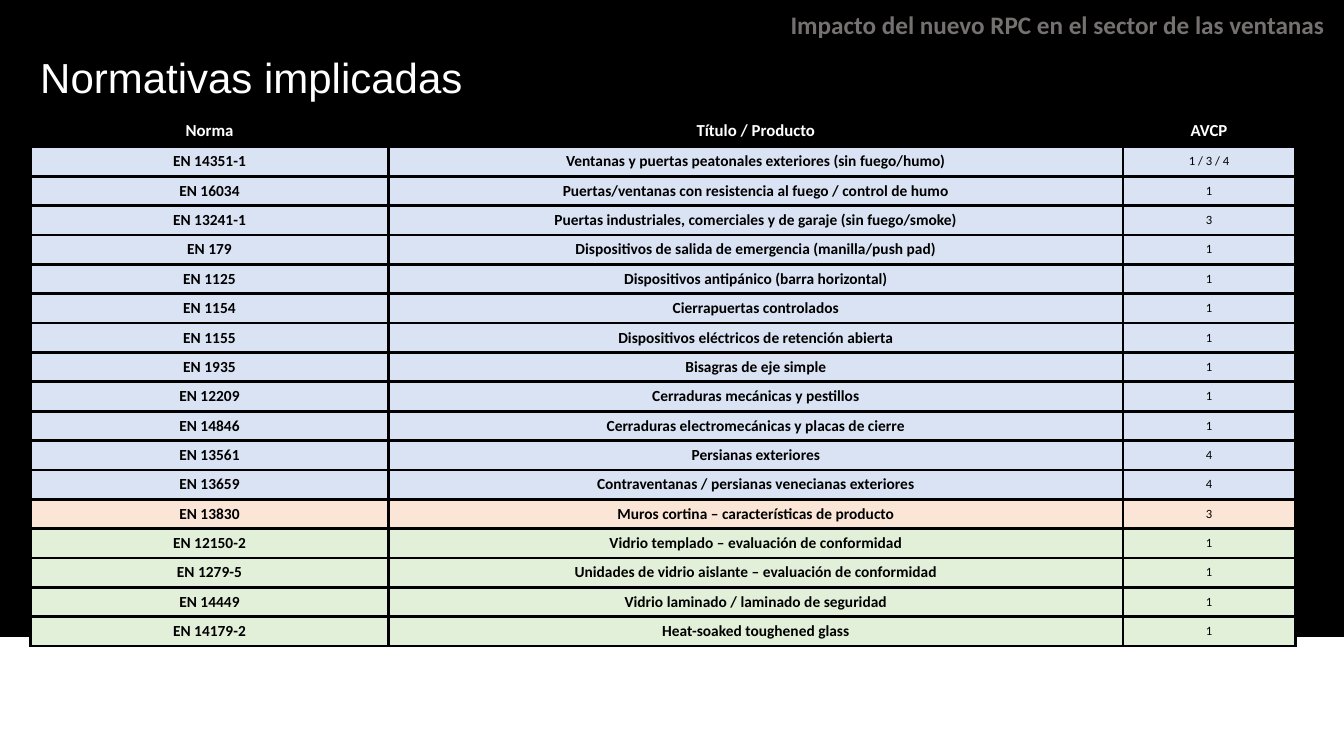
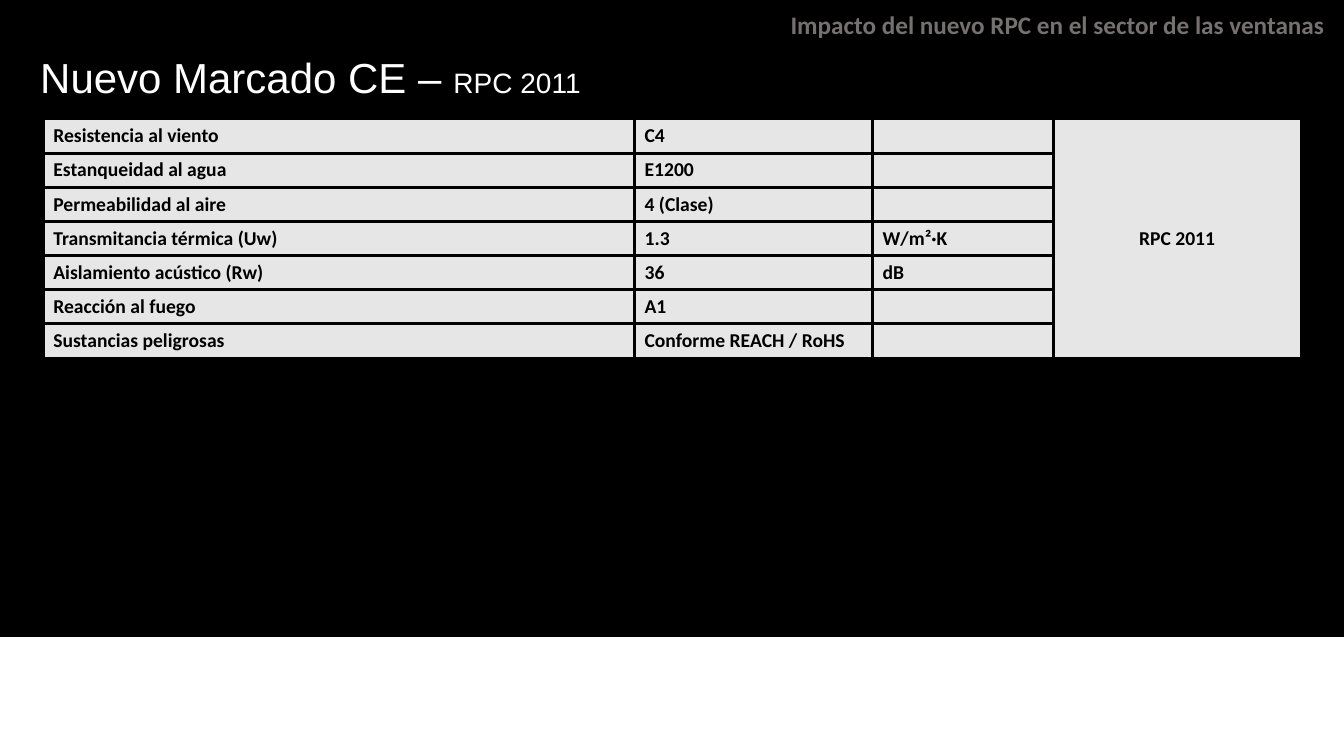
from dataclasses import dataclass
from lxml.etree import SubElement
from pptx import Presentation
from pptx.dml.color import RGBColor
from pptx.enum.shapes import MSO_SHAPE
from pptx.enum.text import MSO_ANCHOR, MSO_AUTO_SIZE, PP_ALIGN
from pptx.oxml.ns import qn
from pptx.util import Cm, Pt


@dataclass(frozen=True)
class Theme:
    """Colours, fonts and type sizes of the deck."""
    black: str = "000000"
    white: str = "FFFFFF"
    header: str = "767171"
    windows: str = "DAE3F3"
    facade: str = "FBE5D6"
    glass: str = "E2F0D9"
    neutral: str = "E7E6E6"
    title_font: str = "Arial"
    text_font: str = "Calibri"
    title_size: int = 30
    subtitle_size: int = 20
    header_size: int = 18
    marking_size: int = 14
    heading_size: int = 12
    standard_size: int = 11
    system_size: int = 9
    border: float = 2.25


THEME = Theme()

SECTION = "Impacto del nuevo RPC en el sector de las ventanas"

HEADINGS = ("Norma", "Título / Producto", "AVCP")

STANDARDS = (
    (THEME.windows, (
        ("EN 14351-1", "Ventanas y puertas peatonales exteriores (sin fuego/humo)", "1 / 3 / 4"),
        ("EN 16034", "Puertas/ventanas con resistencia al fuego / control de humo", "1"),
        ("EN 13241-1", "Puertas industriales, comerciales y de garaje (sin fuego/smoke)", "3"),
        ("EN 179", "Dispositivos de salida de emergencia (manilla/push pad)", "1"),
        ("EN 1125", "Dispositivos antipánico (barra horizontal)", "1"),
        ("EN 1154", "Cierrapuertas controlados", "1"),
        ("EN 1155", "Dispositivos eléctricos de retención abierta", "1"),
        ("EN 1935", "Bisagras de eje simple", "1"),
        ("EN 12209", "Cerraduras mecánicas y pestillos", "1"),
        ("EN 14846", "Cerraduras electromecánicas y placas de cierre", "1"),
        ("EN 13561", "Persianas exteriores", "4"),
        ("EN 13659", "Contraventanas / persianas venecianas exteriores", "4"),
    )),
    (THEME.facade, (
        ("EN 13830", "Muros cortina – características de producto", "3"),
    )),
    (THEME.glass, (
        ("EN 12150-2", "Vidrio templado – evaluación de conformidad", "1"),
        ("EN 1279-5", "Unidades de vidrio aislante – evaluación de conformidad", "1"),
        ("EN 14449", "Vidrio laminado / laminado de seguridad", "1"),
        ("EN 14179-2", "Heat-soaked toughened glass", "1"),
    )),
)

MARKING = (
    ("Resistencia al viento", "C4", ""),
    ("Estanqueidad al agua", "E1200", ""),
    ("Permeabilidad al aire", "4 (Clase)", ""),
    ("Transmitancia térmica (Uw)", "1.3", "W/m²·K"),
    ("Aislamiento acústico (Rw)", "36", "dB"),
    ("Reacción al fuego", "A1", ""),
    ("Sustancias peligrosas", "Conforme REACH / RoHS", ""),
)


def set_font(font, name, size, colour, bold=False):
    """Apply typeface, size, colour and weight."""
    font.name, font.size, font.bold = name, Pt(size), bold
    font.color.rgb = RGBColor.from_string(colour)


def move_band_to_layout(page, width, height):
    """Draw the black band and place it behind everything on the page's layout."""
    band = page.shapes.add_shape(MSO_SHAPE.RECTANGLE, 0, 0, width, height)
    band.shadow.inherit = False
    band.fill.solid()
    band.fill.fore_color.rgb = RGBColor.from_string(THEME.black)
    band.line.color.rgb = RGBColor.from_string(THEME.black)
    band.line.width = Pt(1)
    band.element.nvSpPr.cNvPr.set("id", "20")
    page.slide_layout.shapes.element.insert(2, band.element)


def add_header(page, left, top, width, height):
    """Write the section name at the top right."""
    box = page.shapes.add_textbox(left, top, width, height)
    box.text_frame.word_wrap = True
    para = box.text_frame.paragraphs[0]
    para.text = SECTION
    para.alignment = PP_ALIGN.RIGHT
    set_font(para.font, THEME.text_font, THEME.header_size, THEME.header, True)


def set_title(page, text, subtitle, left, top, width, height):
    """Fill and place the title, with an optional smaller ending."""
    box = page.shapes.title
    box.left, box.top, box.width, box.height = left, top, width, height
    frame = box.text_frame
    frame.vertical_anchor = MSO_ANCHOR.TOP
    frame.auto_size = MSO_AUTO_SIZE.NONE
    para = frame.paragraphs[0]
    para.alignment = PP_ALIGN.LEFT
    para.line_spacing = 0.9
    set_font(para.font, THEME.title_font, THEME.title_size, THEME.white)
    para.add_run().text = text
    if subtitle:
        span = para.add_run()
        span.text = subtitle
        span.font.size = Pt(THEME.subtitle_size)


def add_page(deck, title, subtitle=""):
    """Add a page with the shared header and title."""
    page = deck.slides.add_slide(deck.slide_layouts[5])
    add_header(page, Cm(9.86), Cm(0.1), Cm(23.77), Cm(1.02))
    set_title(page, title, subtitle, Cm(0.76), Cm(1.32), Cm(32.18), Cm(1.98))
    return page


def add_grid(page, left, top, widths, heights):
    """Add an unstyled table with the given column widths and row heights."""
    frame = page.shapes.add_table(len(heights), len(widths), left, top,
                                  Cm(sum(widths)), Cm(sum(heights)))
    table = frame.table
    table.first_row = table.horz_banding = False
    for column, width in zip(table.columns, widths):
        column.width = Cm(width)
    for row, height in zip(table.rows, heights):
        row.height = Cm(height)
    return table


def fill_cell(cell, text, fill, size, colour=THEME.black, bold=True, align=PP_ALIGN.LEFT):
    """Write one bordered, filled cell."""
    cell.margin_top = cell.margin_bottom = 0
    cell.vertical_anchor = MSO_ANCHOR.MIDDLE
    properties = cell._tc.get_or_add_tcPr()
    for side in ("a:lnL", "a:lnR", "a:lnT", "a:lnB"):
        line = SubElement(properties, qn(side), w=str(Pt(THEME.border)))
        SubElement(SubElement(line, qn("a:solidFill")), qn("a:srgbClr"), val=THEME.black)
    cell.fill.solid()
    cell.fill.fore_color.rgb = RGBColor.from_string(fill)
    para = cell.text_frame.paragraphs[0]
    if text:
        para.text = text
    para.alignment = align
    set_font(para.font, THEME.text_font, size, colour, bold)


def add_standards_table(page, left, top):
    """Add the table of standards, coloured by product family."""
    rows = [(fill, row) for fill, group in STANDARDS for row in group]
    table = add_grid(page, left, top, (9.04, 18.5, 4.34), [0.8] + [0.74] * len(rows))
    for column, heading in enumerate(HEADINGS):
        fill_cell(table.cell(0, column), heading, THEME.black, THEME.heading_size,
                  THEME.white, align=PP_ALIGN.CENTER)
    for index, (fill, row) in enumerate(rows, 1):
        for column, text in enumerate(row):
            is_system = column == len(row) - 1
            size = THEME.system_size if is_system else THEME.standard_size
            fill_cell(table.cell(index, column), text, fill, size,
                      bold=not is_system, align=PP_ALIGN.CENTER)


def add_marking_table(page, left, top):
    """Add the table of declared performances with its merged regulation column."""
    table = add_grid(page, left, top, (14.9, 6, 4.55, 6.25), [0.86] * len(MARKING))
    last = len(MARKING) - 1
    for index, row in enumerate(MARKING):
        for column, text in enumerate(row):
            fill_cell(table.cell(index, column), text, THEME.neutral, THEME.marking_size)
        fill_cell(table.cell(index, 3), "" if index else "RPC 2011", THEME.neutral,
                  THEME.marking_size, align=PP_ALIGN.CENTER)
    table.cell(0, 3).merge(table.cell(last, 3))


def main():
    """Build and save the deck."""
    deck = Presentation()
    deck.slide_width, deck.slide_height = Cm(33.87), Cm(19.05)
    standards = add_page(deck, "Normativas implicadas")
    move_band_to_layout(standards, deck.slide_width, Cm(16.03))
    add_standards_table(standards, Cm(0.76), Cm(2.9))
    marking = add_page(deck, "Nuevo Marcado CE – ", "RPC 2011")
    add_marking_table(marking, Cm(1.09), Cm(3))
    deck.save("out.pptx")


if __name__ == "__main__":
    main()
